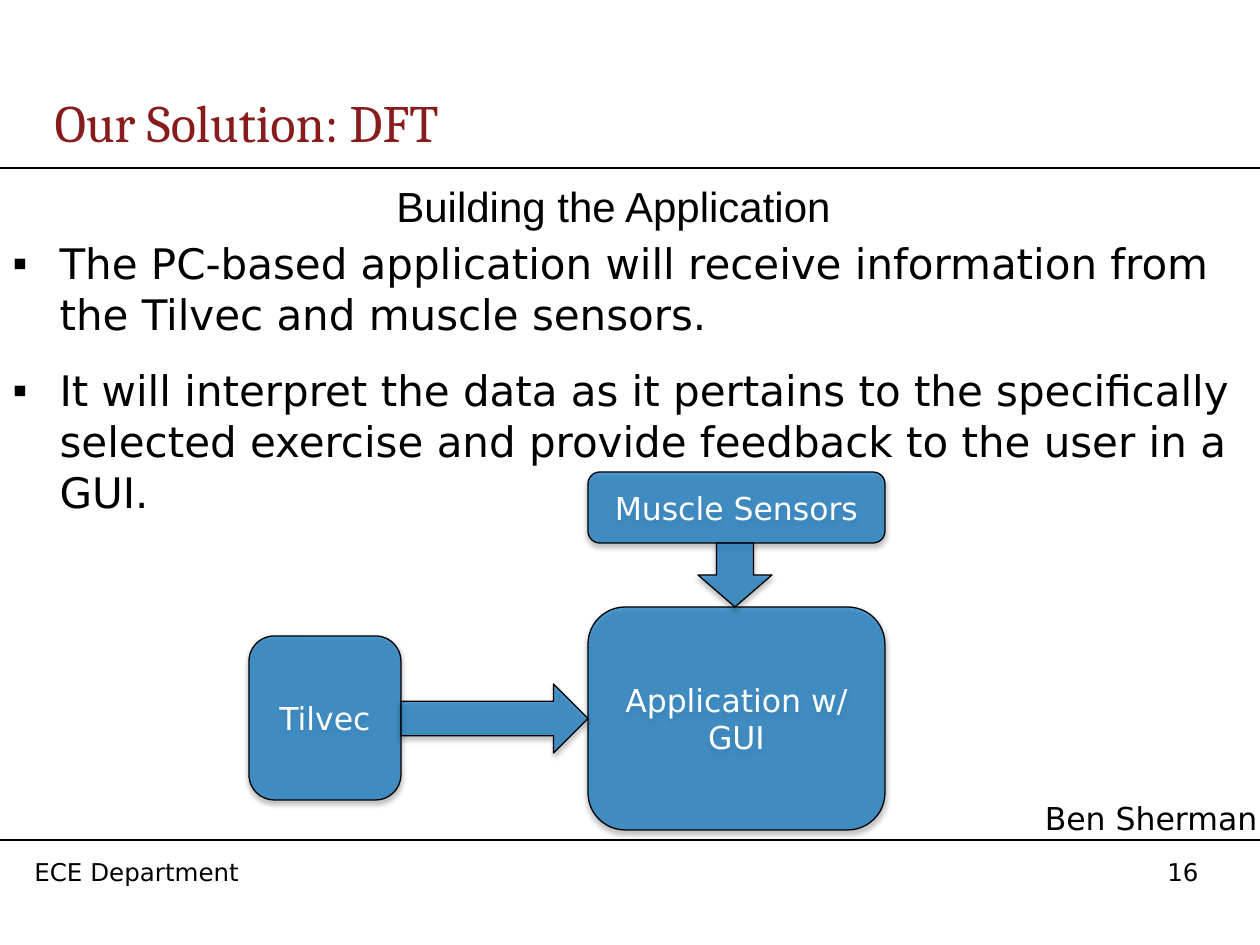
"""Build the slide on the application design, with its block diagram."""
import pptx
import pptx.dml.color
import pptx.enum.shapes
import pptx.enum.text
import pptx.oxml
import pptx.oxml.ns
import pptx.util
from lxml import etree

COLORS = {"text": "000000", "title": "881C1C", "block": "0070C0", "label": "FFFFFF"}
SCALE = 914400 / 126
NS = pptx.oxml.ns.nsdecls("a")
SHAPE = pptx.enum.shapes.MSO_SHAPE
ALIGN = pptx.enum.text.PP_ALIGN
ANCHOR = pptx.enum.text.MSO_ANCHOR


def px(*lengths):
    return [pptx.util.Emu(round(n * SCALE)) for n in lengths]


def rgb(name):
    return pptx.dml.color.RGBColor.from_string(COLORS[name])


def write(p, text, size=18, font="DejaVu Sans", color="text", align=ALIGN.LEFT,
          spacing=1.0, before=0, after=0, bullet=None):
    pPr = p._p.get_or_add_pPr()
    indent = px(47)[0] if bullet else 0
    pPr.set("marL", str(indent))
    pPr.set("indent", str(-indent))
    bu = f'<a:buChar {NS} char="{bullet}"/>' if bullet else f"<a:buNone {NS}/>"
    pPr.append(pptx.oxml.parse_xml(bu))
    p.alignment = align
    p.line_spacing = spacing
    p.space_before = pptx.util.Pt(before)
    p.space_after = pptx.util.Pt(after)
    r = p.add_run()
    r.text = text
    r.font.size = pptx.util.Pt(size)
    r.font.name = font
    r.font.color.rgb = rgb(color)


class Deck:
    def __init__(self, prs):
        self.s = prs.slides.add_slide(prs.slide_layouts[1])

    def frame(self, sp, anchor=ANCHOR.TOP, wrap=True):
        tf = sp.text_frame
        tf.word_wrap = wrap
        tf.auto_size = pptx.enum.text.MSO_AUTO_SIZE.NONE
        tf.vertical_anchor = anchor
        return tf

    def placeholder(self, idx, x, y, w, h):
        sp = self.s.placeholders[idx]
        sp.left, sp.top, sp.width, sp.height = px(x, y, w, h)
        return self.frame(sp)

    def title(self, text, *box):
        write(self.placeholder(0, *box).paragraphs[0], text,
              size=30, font="Cambria", color="title")

    def body(self, bullets, author, *box):
        tf = self.placeholder(1, *box)
        p = tf.paragraphs[0]
        for text in bullets:
            write(p, text, size=24, spacing=1.01, after=14.2, bullet="▪")
            p = tf.add_paragraph()
        write(p, author, align=ALIGN.RIGHT, spacing=1.01, before=147)

    def text(self, text, x, y, w, h, wrap=True, **fmt):
        sp = self.s.shapes.add_textbox(*px(x, y, w, h))
        write(self.frame(sp, wrap=wrap).paragraphs[0], text, **fmt)

    def rule(self, y):
        ends = px(0, y, 1260, y)
        line = self.s.shapes.add_connector(pptx.enum.shapes.MSO_CONNECTOR.STRAIGHT, *ends)
        line.line.color.rgb = rgb("text")
        line.line.width = pptx.util.Pt(1)
        etree.SubElement(line._element.spPr, pptx.oxml.ns.qn("a:effectLst"))

    def block(self, kind, x, y, w, h, text=None):
        sp = self.s.shapes.add_shape(kind, *px(x, y, w, h))
        sp.fill.solid()
        sp.fill.fore_color.rgb = rgb("block")
        color = sp._element.spPr.find(".//" + pptx.oxml.ns.qn("a:srgbClr"))
        color.append(pptx.oxml.parse_xml(f'<a:alpha {NS} val="67000"/>'))
        sp.line.color.rgb = rgb("text")
        sp.line.width = pptx.util.Pt(0.75)
        sp.shadow.inherit = False
        sp._element.spPr.find(pptx.oxml.ns.qn("a:effectLst")).append(pptx.oxml.parse_xml(
            f'<a:outerShdw {NS} blurRad="39400" dist="22900" dir="5400000" rotWithShape="0">'
            f'<a:srgbClr val="{COLORS["text"]}"><a:alpha val="35000"/></a:srgbClr>'
            '</a:outerShdw>'))
        if text:
            tf = self.frame(sp, ANCHOR.MIDDLE)
            write(tf.paragraphs[0], text, color="label", align=ALIGN.CENTER)


def main():
    prs = pptx.Presentation()
    prs.slide_width, prs.slide_height = px(1260, 945)
    deck = Deck(prs)
    deck.title("Our Solution: DFT", 42, 84, 1217, 76)
    deck.body(["The PC-based application will receive information from the Tilvec "
               "and muscle sensors.",
               "It will interpret the data as it pertains to the specifically selected "
               "exercise and provide feedback to the user in a GUI."],
              "Ben Sherman", 0, 231, 1270, 703)
    for y in (168, 840):
        deck.rule(y)
    deck.text("Building the Application", 5, 179, 1217, 72,
              size=24, font="Arial", align=ALIGN.CENTER, spacing=0.93)
    deck.text("ECE Department", 22, 851, 231, 42, wrap=False, size=14)
    deck.text("16", 1155, 851, 84, 42, size=14)

    deck.block(SHAPE.ROUNDED_RECTANGLE, 588, 607, 297, 223, "Application w/ GUI")
    deck.block(SHAPE.ROUNDED_RECTANGLE, 249, 636, 152, 164, "Tilvec")
    deck.block(SHAPE.RIGHT_ARROW, 401, 684, 187, 69)
    deck.block(SHAPE.ROUNDED_RECTANGLE, 588, 472, 297, 71, "Muscle Sensors")
    deck.block(SHAPE.DOWN_ARROW, 698, 543, 74, 64)
    prs.save("out.pptx")


if __name__ == "__main__":
    main()
